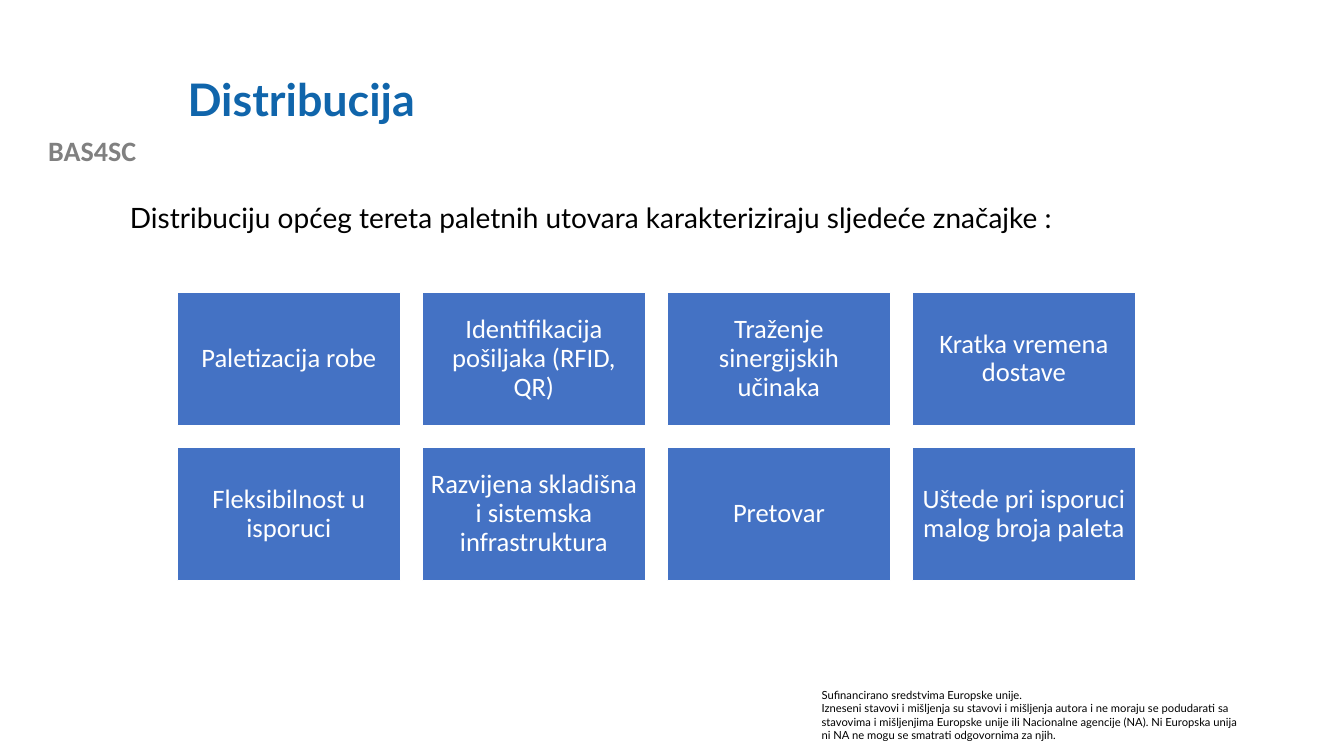
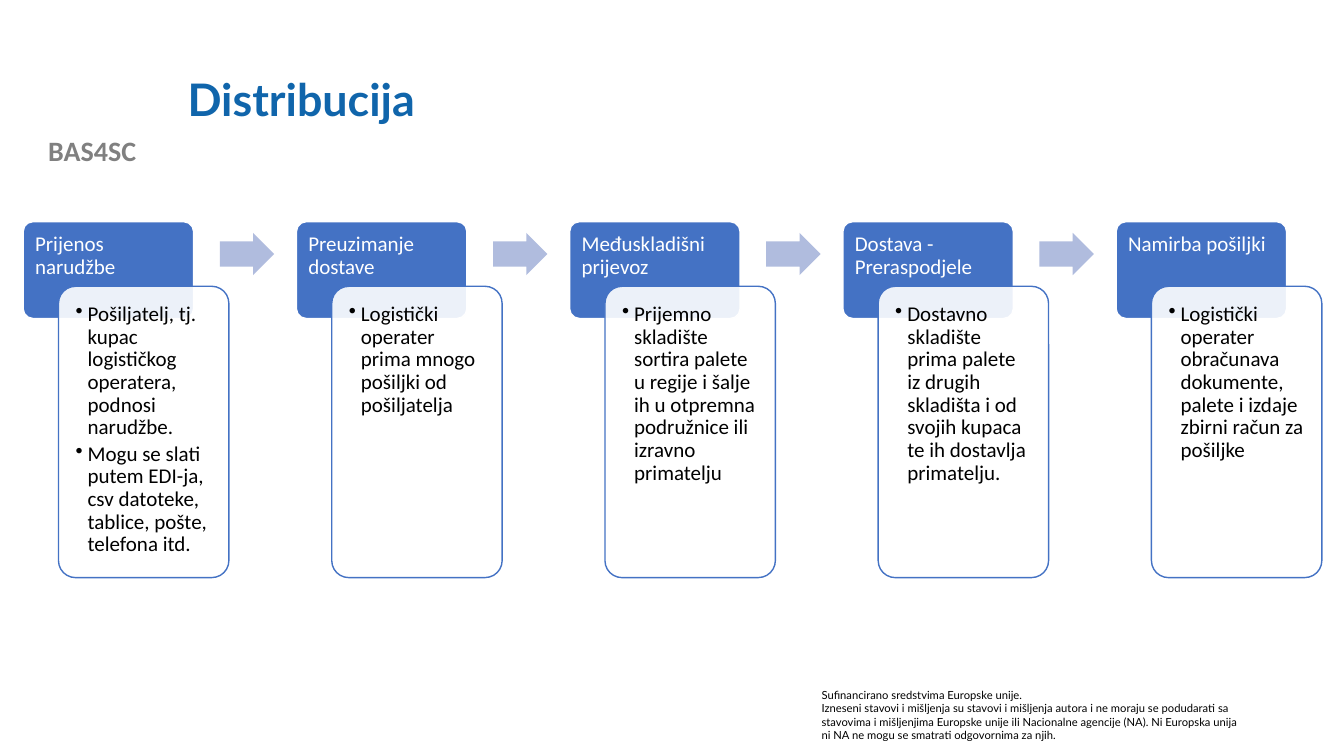
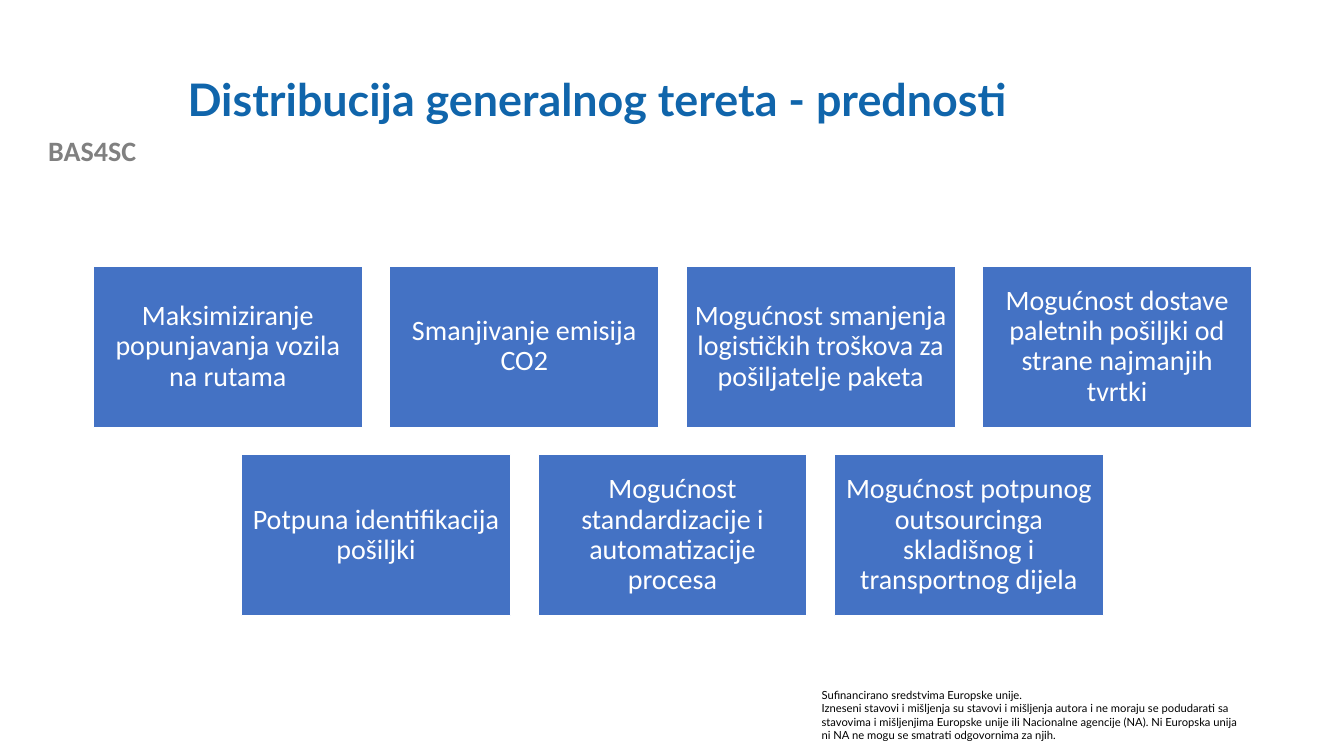
from lxml.etree import SubElement
from pptx import Presentation
from pptx.dml.color import RGBColor
from pptx.enum.shapes import MSO_SHAPE
from pptx.enum.text import MSO_ANCHOR, MSO_AUTO_SIZE, PP_ALIGN
from pptx.oxml.ns import qn
from pptx.util import Inches, Pt

WHITE, BLACK, GREY = "FFFFFF", "000000", "808080"
TITLE_BLUE, BLUE, PALE_BLUE = "1065AB", "4472C4", "B0BCDE"


def rgb(hex_string):
    return RGBColor.from_string(hex_string)


def write_text(shape, *paragraphs, size, color=BLACK, font="Calibri", bold=False,
               align=PP_ALIGN.LEFT, anchor=MSO_ANCHOR.TOP, spacing=0.9,
               insets=(0.1, 0.05, 0.1, 0.05), bullet_indent=None, gap=0):
    frame = shape.text_frame
    frame.word_wrap = True
    frame.auto_size = MSO_AUTO_SIZE.NONE
    frame.vertical_anchor = anchor
    (frame.margin_left, frame.margin_top,
     frame.margin_right, frame.margin_bottom) = map(Inches, insets)
    for index, text in enumerate(paragraphs):
        paragraph = frame.add_paragraph() if index else frame.paragraphs[0]
        paragraph.alignment = align
        paragraph.line_spacing = spacing
        paragraph.space_before = Pt(gap if index else 0)
        if bullet_indent:
            properties = paragraph._p.get_or_add_pPr()
            properties.set("marL", str(Inches(bullet_indent)))
            properties.set("indent", str(-Inches(bullet_indent)))
            SubElement(properties, qn("a:buChar")).set("char", "•")
        run = paragraph.add_run()
        run.text = text
        run.font.name, run.font.size, run.font.bold = font, Pt(size), bold
        run.font.color.rgb = rgb(color)


prs = Presentation()
prs.slide_width, prs.slide_height = Inches(13.33), Inches(7.5)

# Title, project label and funding note on every slide
slides = []
for heading in ("Distribucija", "Distribucija", "Distribucija generalnog tereta - prednosti"):
    slide = prs.slides.add_slide(prs.slide_layouts[5])
    slides.append(slide)

    title = slide.shapes.title
    title.left, title.top = Inches(1.76), Inches(0.4)
    title.width, title.height = Inches(10.66), Inches(1.22)
    write_text(title, heading, size=32, color=TITLE_BLUE, font="Lato", bold=True,
               anchor=MSO_ANCHOR.MIDDLE)

    project = slide.shapes.add_textbox(0, Inches(1.28), Inches(1.83), Inches(0.44))
    write_text(project, "BAS4SC", size=20, color=GREY, bold=True,
               align=PP_ALIGN.CENTER, spacing=1.0)

    funding = slide.shapes.add_textbox(Inches(8.05), Inches(6.78), Inches(4.37), Inches(0.64))
    write_text(funding, "Sufinancirano sredstvima Europske unije.",
               "Izneseni stavovi i mišljenja su stavovi i mišljenja autora i ne moraju se "
               "podudarati sa stavovima i mišljenjima Europske unije ili Nacionalne agencije "
               "(NA). Ni Europska unija ni NA ne mogu se smatrati odgovornima za njih.",
               size=8, font="Lato", spacing=1.0)

features_slide, process_slide, benefits_slide = slides

# Introduction to the features
introduction = features_slide.shapes.add_textbox(
    Inches(1.19), Inches(1.98), Inches(11.5), Inches(0.5))
write_text(introduction,
           "Distribuciju općeg tereta paletnih utovara karakteriziraju sljedeće značajke :",
           size=20, font="Lato")

# Features and benefits: rows of tiles, each row centred on the same axis
features = [
    ["Paletizacija robe", "Identifikacija pošiljaka (RFID, QR)",
     "Traženje sinergijskih učinaka", "Kratka vremena dostave"],
    ["Fleksibilnost u isporuci", "Razvijena skladišna i sistemska infrastruktura",
     "Pretovar", "Uštede pri isporuci malog broja paleta"],
]
benefits = [
    ["Maksimiziranje popunjavanja vozila na rutama", "Smanjivanje emisija CO2",
     "Mogućnost smanjenja logističkih troškova za pošiljatelje paketa",
     "Mogućnost dostave paletnih pošiljki od strane najmanjih tvrtki"],
    ["Potpuna identifikacija pošiljki", "Mogućnost standardizacije i automatizacije procesa",
     "Mogućnost potpunog outsourcinga skladišnog i transportnog dijela"],
]
for slide, rows, axis, top, width, height, gap, size in (
        (features_slide, features, 6.51, 2.9, 2.21, 1.32, 0.22, 19),
        (benefits_slide, benefits, 6.67, 2.64, 2.67, 1.6, 0.27, 20)):
    for row, labels in enumerate(rows):
        row_left = axis - (len(labels) * (width + gap) - gap) / 2
        for column, label in enumerate(labels):
            tile = slide.shapes.add_shape(
                MSO_SHAPE.RECTANGLE,
                Inches(row_left + column * (width + gap)), Inches(top + row * (height + gap)),
                Inches(width), Inches(height))
            tile.shadow.inherit = False
            tile.fill.solid()
            tile.fill.fore_color.rgb = rgb(BLUE)
            tile.line.color.rgb = rgb(WHITE)
            tile.line.width = Pt(1)
            write_text(tile, label, size=size, color=WHITE, align=PP_ALIGN.CENTER,
                       anchor=MSO_ANCHOR.MIDDLE, insets=(0.08,) * 4)

# Process: a heading, an overlapping detail card and an arrow per step
steps = [
    ("Prijenos narudžbe",
     ["Pošiljatelj, tj. kupac logističkog operatera, podnosi narudžbe.",
      "Mogu se slati putem EDI-ja, csv datoteke, tablice, pošte, telefona itd."]),
    ("Preuzimanje dostave",
     ["Logistički operater prima mnogo pošiljki od pošiljatelja"]),
    ("Međuskladišni prijevoz",
     ["Prijemno skladište sortira palete u regije i šalje ih u otpremna podružnice "
      "ili izravno primatelju"]),
    ("Dostava - Preraspodjele",
     ["Dostavno skladište prima palete iz drugih skladišta i od svojih kupaca "
      "te ih dostavlja primatelju."]),
    ("Namirba pošiljki",
     ["Logistički operater obračunava dokumente, palete i izdaje zbirni račun za pošiljke"]),
]
STEP_LEFT, STEP_PITCH, STEP_TOP, CARD_WIDTH = 0.23, 2.71, 2.2, 1.69
for number, (name, details) in enumerate(steps):
    left = STEP_LEFT + number * STEP_PITCH
    cards = []
    for card_left, card_top, card_height, fill, outline in (
            (left, STEP_TOP, 0.96, BLUE, WHITE),
            (left + 0.35, STEP_TOP + 0.64, 2.89, WHITE, BLUE)):
        card = process_slide.shapes.add_shape(
            MSO_SHAPE.ROUNDED_RECTANGLE, Inches(card_left), Inches(card_top),
            Inches(CARD_WIDTH), Inches(card_height))
        card.adjustments[0] = 0.1
        card.shadow.inherit = False
        card.fill.solid()
        card.fill.fore_color.rgb = rgb(fill)
        card.line.color.rgb = rgb(outline)
        card.line.width = Pt(1)
        cards.append(card)
    step_card, detail_card = cards
    write_text(step_card, name, size=15, color=WHITE, insets=(0.09, 0.09, 0.09, 0.06))
    write_text(detail_card, *details, size=15, insets=(0.12,) * 4, bullet_indent=0.12, gap=2.5)

    # The heading shows faintly through the detail card
    card_color = detail_card.element.spPr.find(qn("a:solidFill"))[0]
    SubElement(card_color, qn("a:alpha")).set("val", "90000")

    if number < len(steps) - 1:
        arrow = process_slide.shapes.add_shape(
            MSO_SHAPE.RIGHT_ARROW, Inches(left + 1.95), Inches(STEP_TOP + 0.11),
            Inches(0.54), Inches(0.42))
        arrow.adjustments[0], arrow.adjustments[1] = 0.6, 0.5
        arrow.shadow.inherit = False
        arrow.fill.solid()
        arrow.fill.fore_color.rgb = rgb(PALE_BLUE)
        arrow.line.fill.background()

prs.save("out.pptx")
